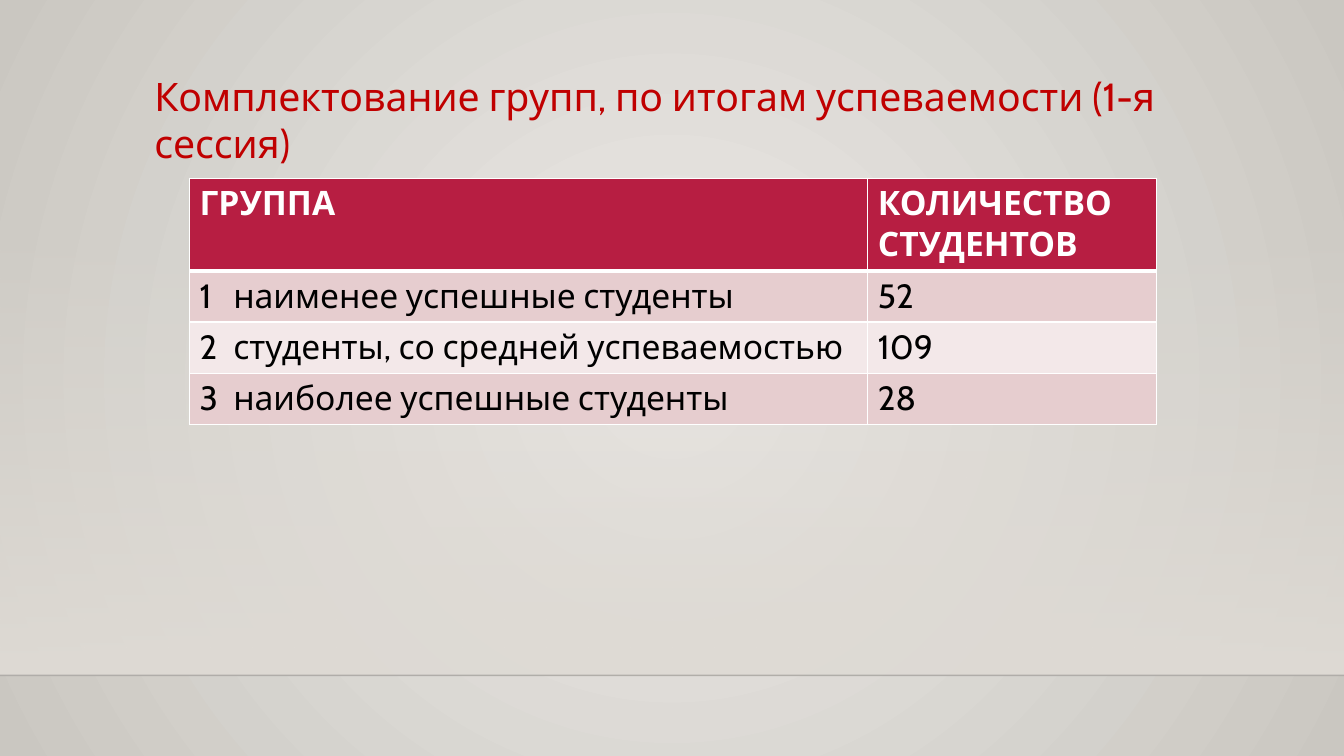
from dataclasses import dataclass

from lxml import etree
from pptx import Presentation
from pptx.dml.color import RGBColor
from pptx.enum import shapes, text
from pptx.oxml import ns
from pptx.util import Pt

FONT = "Cabin"
COLORS = {
    "title": "C00000",
    "header": "B71E42",
    "band_dark": "E6CDCF",
    "band_light": "F3E8E9",
    "white": "FFFFFF",
    "black": "000000",
    "center": "ECEAE7",
    "edge": "CAC7C1",
    "floor": "DFDBD5",
    "horizon": "000001",
}
SLIDE_WIDTH, SLIDE_HEIGHT = 960, 540
HORIZON_TOP = 482.4
NUMBER_TAB = 24


@dataclass
class GroupRow:
    group: str
    students: str
    height: float
    fill: str
    font: str = "black"
    bold: bool = False
    rule_below: float = 1


ROWS = [
    GroupRow("ГРУППА", "КОЛИЧЕСТВО СТУДЕНТОВ", 66, "header", "white", True, 3),
    GroupRow("1\tнаименее успешные студенты", "52", 36.6, "band_dark"),
    GroupRow("2\tстуденты, со средней успеваемостью", "109", 36.6, "band_light"),
    GroupRow("3\tнаиболее успешные студенты", "28", 36.6, "band_dark"),
]
COLUMN_WIDTHS = [484.5, 206]


def rgb(name: str) -> RGBColor:
    return RGBColor.from_string(COLORS[name])


def add_child(parent, tag: str, **attributes):
    return etree.SubElement(parent, ns.qn(tag), attributes)


def add_text(paragraph, words: str, size: float, color: str, bold: bool = False) -> None:
    run = paragraph.add_run()
    run.text = words
    run.font.name, run.font.size, run.font.bold = FONT, Pt(size), bold
    run.font.color.rgb = rgb(color)


def set_gradient(fill, first: str, last: str) -> None:
    fill.gradient()
    for stop, name, position in zip(fill.gradient_stops, (first, last), (0, 1)):
        stop.color.rgb = rgb(name)
        stop.position = position


def set_alpha(parent, percent: int) -> None:
    color = next(parent.iter(ns.qn("a:srgbClr")))
    add_child(color, "a:alpha", val=str(percent * 1000))


def add_border(cell, side: str, width: float) -> None:
    line = add_child(cell._tc.get_or_add_tcPr(), f"a:ln{side}", w=str(Pt(width)))
    add_child(add_child(line, "a:solidFill"), "a:srgbClr", val=COLORS["white"])


def fill_cell(cell, words: str, row: GroupRow, rule_above: float) -> None:
    for side, width in zip("LRTB", (1, 1, rule_above, row.rule_below)):
        add_border(cell, side, width)
    cell.fill.solid()
    cell.fill.fore_color.rgb = rgb(row.fill)
    paragraph = cell.text_frame.paragraphs[0]
    if "\t" in words:
        tabs = add_child(paragraph._p.get_or_add_pPr(), "a:tabLst")
        add_child(tabs, "a:tab", pos=str(Pt(NUMBER_TAB)), algn="l")
    add_text(paragraph, words, 24, row.font, row.bold)


def add_backdrop(slide) -> None:
    # Radial background
    backdrop = slide.background.fill
    set_gradient(backdrop, "center", "edge")
    linear = next(slide.background._cSld.iter(ns.qn("a:lin")))
    radial = etree.Element(ns.qn("a:path"), {"path": "circle"})
    add_child(radial, "a:fillToRect", l="50000", t="50000", r="50000", b="50000")
    linear.getparent().replace(linear, radial)

    # Fade towards the horizon
    fade_top = 159
    fade = slide.shapes.add_shape(
        shapes.MSO_SHAPE.RECTANGLE,
        0, Pt(fade_top), Pt(SLIDE_WIDTH), Pt(HORIZON_TOP - fade_top))
    fade.shadow.inherit = False
    fade.line.fill.background()
    set_gradient(fade.fill, "floor", "floor")
    fade.fill.gradient_angle = 270
    set_alpha(fade._element.spPr, 0)

    # Horizon line
    horizon = slide.shapes.add_connector(
        shapes.MSO_CONNECTOR.STRAIGHT,
        0, Pt(HORIZON_TOP), Pt(SLIDE_WIDTH), Pt(HORIZON_TOP))
    horizon.line.width = Pt(1)
    horizon.line.color.rgb = rgb("horizon")
    set_alpha(horizon._element.spPr, 20)
    add_child(horizon._element.spPr, "a:effectLst")


def add_title(slide) -> None:
    title = slide.shapes.title
    title.left, title.top, title.width, title.height = Pt(103), Pt(48.2), Pt(776), Pt(41)
    frame = title.text_frame
    frame.word_wrap = True
    frame.auto_size = text.MSO_AUTO_SIZE.SHAPE_TO_FIT_TEXT
    frame.vertical_anchor = text.MSO_ANCHOR.TOP
    heading = frame.paragraphs[0]
    heading.alignment = text.PP_ALIGN.LEFT
    add_text(heading, "Комплектование групп, по итогам успеваемости (1-я сессия)", 28, "title")


def add_group_table(slide) -> None:
    groups = slide.shapes.add_table(
        len(ROWS), len(COLUMN_WIDTHS), Pt(135.4), Pt(127.4),
        Pt(sum(COLUMN_WIDTHS)), Pt(sum(row.height for row in ROWS))).table
    for column, width in zip(groups.columns, COLUMN_WIDTHS):
        column.width = Pt(width)
    rule_above = 1
    for index, row in enumerate(ROWS):
        groups.rows[index].height = Pt(row.height)
        for cell, words in zip(groups.rows[index].cells, (row.group, row.students)):
            fill_cell(cell, words, row, rule_above)
        rule_above = row.rule_below


def main() -> None:
    deck = Presentation()
    deck.slide_width, deck.slide_height = Pt(SLIDE_WIDTH), Pt(SLIDE_HEIGHT)
    slide = deck.slides.add_slide(deck.slide_layouts[5])
    add_backdrop(slide)
    add_group_table(slide)
    add_title(slide)
    deck.save("out.pptx")


if __name__ == "__main__":
    main()
